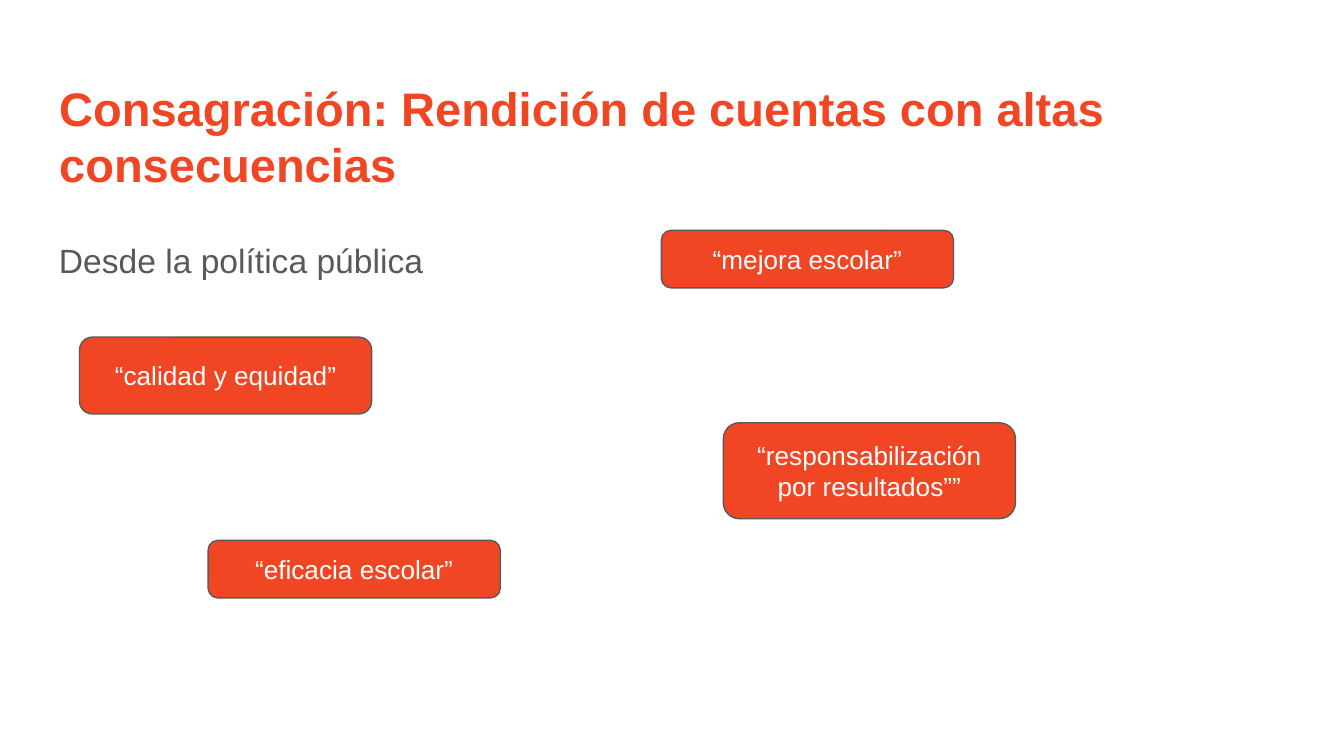
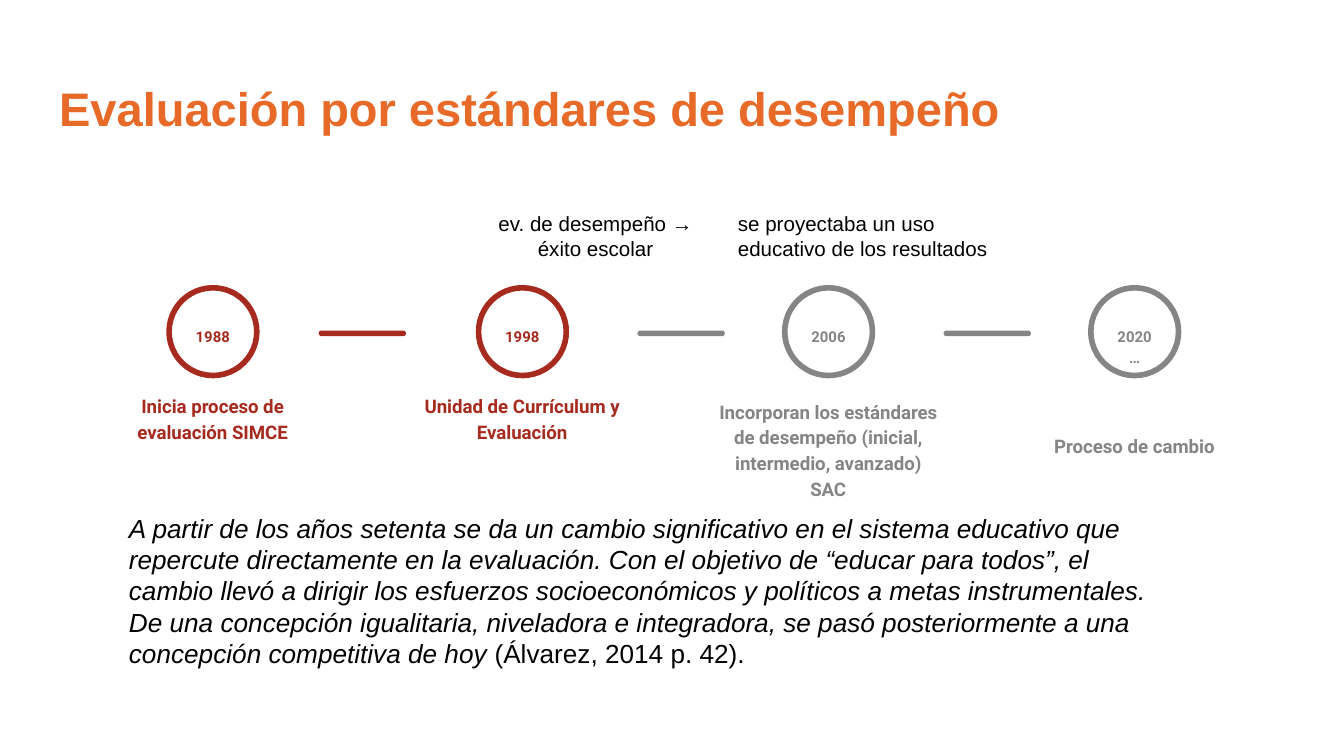
from dataclasses import dataclass

from pptx import Presentation
from pptx.dml.color import RGBColor
from pptx.enum.shapes import MSO_SHAPE
from pptx.enum.text import MSO_ANCHOR, MSO_AUTO_SIZE, PP_ALIGN
from pptx.util import Pt

ROUNDED, OVAL = MSO_SHAPE.ROUNDED_RECTANGLE, MSO_SHAPE.OVAL
LEFT, CENTER = PP_ALIGN.LEFT, PP_ALIGN.CENTER
TOP, MIDDLE, BOTTOM = MSO_ANCHOR.TOP, MSO_ANCHOR.MIDDLE, MSO_ANCHOR.BOTTOM
TITLE_ONLY = 5


@dataclass(frozen=True)
class Theme:
    red: str = "F14624"
    orange: str = "E76A28"
    brick: str = "A72A1E"
    gray: str = "858585"
    dark: str = "595959"
    white: str = "FFFFFF"
    black: str = "000000"
    font: str = "Arial"
    timeline_font: str = "Roboto"
    title_size: float = 25.2
    lead_size: float = 18
    body_size: float = 14
    note_size: float = 11
    caption_size: float = 10
    year_size: float = 8
    inset: float = 7.2


class SlideBuilder:
    def __init__(self, deck, theme):
        self.deck = deck
        self.theme = theme
        self.slide = None

    def start(self, title, color):
        """Add a slide and set its title."""
        theme = self.theme
        self.slide = self.deck.slides.add_slide(self.deck.slide_layouts[TITLE_ONLY])
        background = self.slide.background.fill
        background.solid()
        background.fore_color.rgb = RGBColor.from_string(theme.white)
        box = self.slide.shapes.title
        box.left, box.top, box.width, box.height = Pt(24.5), Pt(35.3), Pt(671), Pt(45.4)
        self.fill_text(box, [[(title, False)]], theme.title_size, color, bold=True)

    def fill_text(self, box, paras, size, color, font=None, bold=False, align=LEFT,
                  anchor=TOP, spacing=1.0, after=0):
        """Fill a box; each paragraph is a list of (text, italic) runs."""
        frame = box.text_frame
        frame.auto_size = MSO_AUTO_SIZE.NONE
        frame.word_wrap = True
        frame.vertical_anchor = anchor
        frame.margin_left = frame.margin_right = Pt(self.theme.inset)
        frame.margin_top = frame.margin_bottom = Pt(self.theme.inset)
        for index, spans in enumerate(paras):
            para = frame.add_paragraph() if index else frame.paragraphs[0]
            para.alignment = align
            para.line_spacing = spacing
            para.space_after = Pt(after)
            for text, italic in spans:
                span = para.add_run()
                span.text = text
                span.font.name = font or self.theme.font
                span.font.size = Pt(size)
                span.font.bold = bold
                span.font.italic = italic
                span.font.color.rgb = RGBColor.from_string(color)

    def text(self, area, paras, size, color, **style):
        box = self.slide.shapes.add_textbox(*map(Pt, area))
        self.fill_text(box, paras, size, color, **style)

    def shape(self, kind, area, fill=None, line=None, weight=0.75, corner=None):
        shape = self.slide.shapes.add_shape(kind, *map(Pt, area))
        shape.shadow.inherit = False
        if corner is not None:
            shape.adjustments[0] = corner
        if fill:
            shape.fill.solid()
            shape.fill.fore_color.rgb = RGBColor.from_string(fill)
        else:
            shape.fill.background()
        if line:
            shape.line.color.rgb = RGBColor.from_string(line)
            shape.line.width = Pt(weight)
        else:
            shape.line.fill.background()
        return shape

    def concept(self, left, top, height, label):
        theme = self.theme
        box = self.shape(ROUNDED, (left, top, 156.5, height), fill=theme.red,
                         line=theme.dark, corner=0.167)
        self.fill_text(box, [[(label, False)]], theme.body_size, theme.white,
                       align=CENTER, anchor=MIDDLE)

    def bar(self, left, color):
        self.shape(ROUNDED, (left, 177.1, 46.8, 3), fill=color, corner=0.5)

    def milestone(self, left, year, caption_top, lines, color):
        """Draw a ring with its year inside and its caption below."""
        theme = self.theme
        style = {"font": theme.timeline_font, "bold": True, "align": CENTER,
                 "spacing": 1.15}
        self.shape(OVAL, (left, 154.2, 47, 47), line=color, weight=3)
        self.text((left + 6.2, 167, 34.5, 25.2), [[(year, False)]],
                  theme.year_size, color, after=16, **style)
        self.text((left - 44, caption_top, 134.6, 35.3),
                  [[(line, False)] for line in lines],
                  theme.caption_size, color, anchor=BOTTOM, **style)


def build_accountability(builder):
    theme = builder.theme
    builder.start("Consagración: Rendición de cuentas con altas consecuencias", theme.red)
    builder.text((24.5, 118, 671, 241), [[("Desde la política pública", False)]],
                 theme.lead_size, theme.dark, spacing=1.15, after=12)
    for concept in (
        (42.6, 180.6, 41.2, "“calidad y equidad”"),
        (111.5, 289.5, 30.8, "“eficacia escolar”"),
        (387.5, 226.5, 51.4, "“responsabilización por resultados””"),
        (354.3, 123.4, 30.8, "“mejora escolar”"),
    ):
        builder.concept(*concept)


def build_standards(builder):
    theme = builder.theme
    builder.start("Evaluación por estándares de desempeño", theme.orange)
    for left, color in ((170.7, theme.brick), (341.5, theme.gray), (505.5, theme.gray)):
        builder.bar(left, color)
    for milestone in (
        (90.6, "1988", 209.5, ["Inicia proceso de evaluación SIMCE"], theme.brick),
        (256.4, "1998", 209.5, ["Unidad de Currículum y Evaluación"], theme.brick),
        (420.4, "2006", 239.8,
         ["Incorporan los estándares de desempeño (inicial, intermedio, avanzado)", "SAC"],
         theme.gray),
        (584.4, "2020…", 216.7, ["Proceso de cambio"], theme.gray),
    ):
        builder.milestone(*milestone)
    for area, note, align in (
        ((250, 105.8, 138.2, 21.6), "ev. de desempeño → éxito escolar", CENTER),
        ((388.2, 105.8, 154.8, 26.6),
         "se proyectaba un uso educativo de los resultados", LEFT),
    ):
        builder.text(area, [[(note, False)]], theme.note_size, theme.black, align=align)
    quote = (
        "A partir de los años setenta se da un cambio significativo en el sistema "
        "educativo que repercute directamente en la evaluación. Con el objetivo de "
        "“educar para todos”, el cambio llevó a dirigir los esfuerzos socioeconómicos "
        "y políticos a metas instrumentales. De una concepción igualitaria, niveladora "
        "e integradora, se pasó posteriormente a una concepción competitiva de hoy "
    )
    builder.text((62, 267.1, 573.8, 45.4),
                 [[(quote, True), ("(Álvarez, 2014 p. 42).", False)]],
                 theme.body_size, theme.black)


def main():
    deck = Presentation()
    deck.slide_width, deck.slide_height = Pt(720), Pt(405)
    builder = SlideBuilder(deck, Theme())
    build_accountability(builder)
    build_standards(builder)
    deck.save("out.pptx")


if __name__ == "__main__":
    main()
